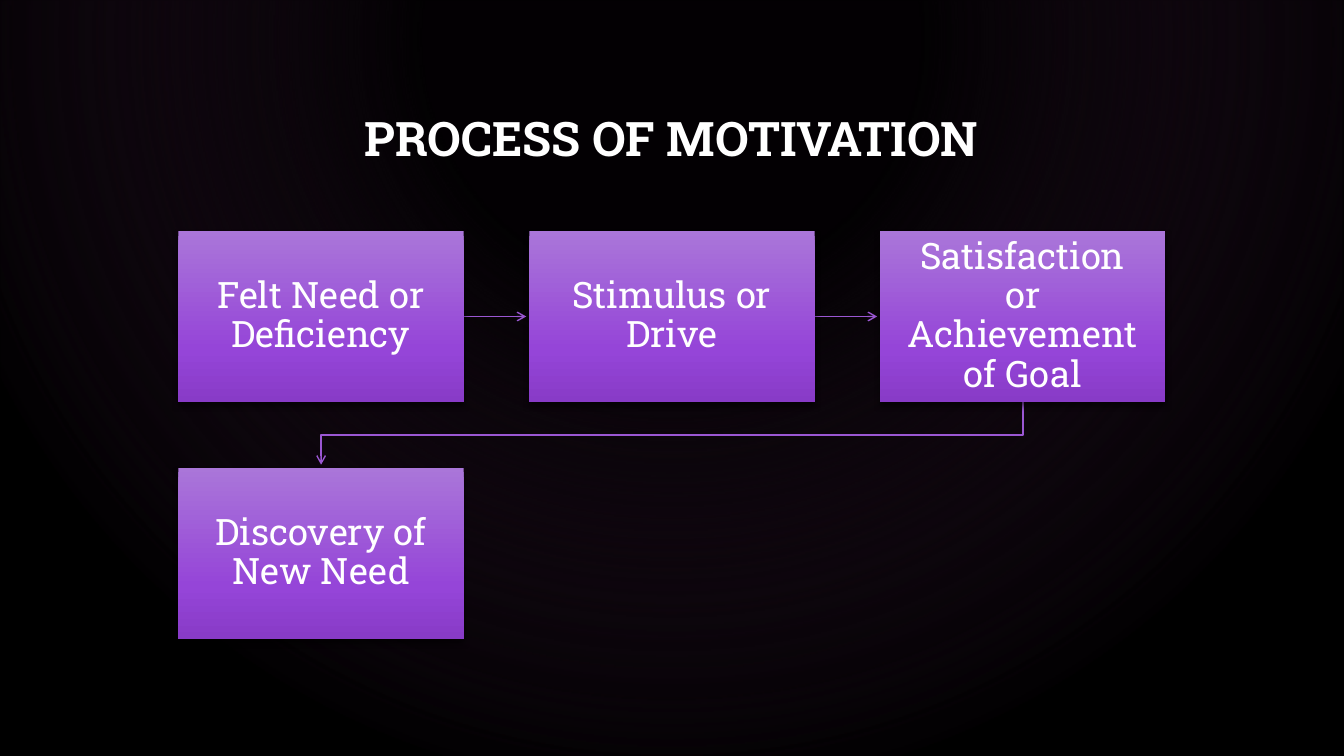
import pptx
import pptx.dml.color
import pptx.enum.shapes
import pptx.enum.text
import pptx.oxml
import pptx.oxml.ns
import pptx.util
from pptx.util import Inches

FONT = "Roboto Slab"
WHITE = "FFFFFF"
ARROW = "9B57D3"
STEP_STOPS = [(0, "AA76D9", 100), (69, "9545D8", 100), (100, "883BC7", 100)]
GLOW_STOPS = [(32, "4A2249", 3), (100, "000000", 70)]
LINEAR_DOWN = '<a:lin ang="5400000" scaled="0"/>'
CIRCLE_FROM_TOP = ('<a:path path="circle"><a:fillToRect l="50000" t="5000" '
                   'r="50000" b="95000"/></a:path>')

STEPS = ["Felt Need or Deficiency", "Stimulus or Drive",
         "Satisfaction or Achievement of Goal", "Discovery of New Need"]
COLUMNS = 3
STEP_WIDTH, STEP_HEIGHT = 2.83, 1.7
GAP = 0.65
ARROW_CLEARANCE = 0.03


def rgb(hex_colour):
    return pptx.dml.color.RGBColor.from_string(hex_colour)


def parse(tag, attributes="", content=""):
    """Build one DrawingML element."""
    namespace = pptx.oxml.ns.nsdecls("a")
    return pptx.oxml.parse_xml(f"<a:{tag} {namespace} {attributes}>{content}</a:{tag}>")


def fill_gradient(shape, stops, direction):
    """Fill with (position, colour, opacity) stops, all in percent."""
    stop_xml = "".join(
        f'<a:gs pos="{position * 1000}"><a:srgbClr val="{colour}">'
        f'<a:alpha val="{opacity * 1000}"/></a:srgbClr></a:gs>'
        for position, colour, opacity in stops)
    gradient = parse("gradFill", 'rotWithShape="1"', f"<a:gsLst>{stop_xml}</a:gsLst>{direction}")
    shape.fill.background()
    properties = shape._element.spPr
    properties.replace(properties.find(pptx.oxml.ns.qn("a:noFill")), gradient)


def format_text(paragraph, size, bold=False):
    paragraph.alignment = pptx.enum.text.PP_ALIGN.CENTER
    paragraph.line_spacing = 0.9
    paragraph.font.name = FONT
    paragraph.font.size = pptx.util.Pt(size)
    paragraph.font.bold = bold
    paragraph.font.color.rgb = rgb(WHITE)


def add_rectangle(slide, left, top, width, height, stops, direction):
    rectangle = slide.shapes.add_shape(
        pptx.enum.shapes.MSO_SHAPE.RECTANGLE,
        Inches(left), Inches(top), Inches(width), Inches(height))
    fill_gradient(rectangle, stops, direction)
    rectangle.line.fill.background()
    rectangle.shadow.inherit = False
    return rectangle


def add_background(slide, width, height):
    slide.background.fill.solid()
    slide.background.fill.fore_color.rgb = rgb("000000")
    glow = add_rectangle(slide, 0, 0, width, height, GLOW_STOPS, CIRCLE_FROM_TOP)
    tree = slide.shapes._spTree
    tree.remove(glow._element)
    tree.insert(2, glow._element)


def add_title(slide, left, top, width, height):
    title = slide.shapes.title
    title.left, title.top = Inches(left), Inches(top)
    title.width, title.height = Inches(width), Inches(height)
    title.text_frame.text = "PROCESS OF MOTIVATION"
    title.text_frame.vertical_anchor = pptx.enum.text.MSO_ANCHOR.MIDDLE
    format_text(title.text_frame.paragraphs[0], 34, bold=True)


def add_step(slide, left, top, label):
    step = add_rectangle(slide, left, top, STEP_WIDTH, STEP_HEIGHT, STEP_STOPS, LINEAR_DOWN)
    effects = step._element.spPr.find(pptx.oxml.ns.qn("a:effectLst"))
    effects.append(parse(
        "outerShdw", 'blurRad="50800" dist="38100" dir="5400000" rotWithShape="0"',
        '<a:srgbClr val="000000"><a:alpha val="54000"/></a:srgbClr>'))
    frame = step.text_frame
    frame.word_wrap = True
    frame.vertical_anchor = pptx.enum.text.MSO_ANCHOR.MIDDLE
    frame.margin_left = frame.margin_right = Inches(0.2)
    frame.margin_top = frame.margin_bottom = Inches(0.2)
    frame.text = label
    format_text(frame.paragraphs[0], 26)


def style_arrow(arrow):
    arrow.line.color.rgb = rgb(ARROW)
    arrow.line.width = pptx.util.Pt(1)
    arrow.line._get_or_add_ln().append(parse("tailEnd", 'type="arrow"'))


def add_straight_arrow(slide, start, end, y):
    arrow = slide.shapes.add_connector(
        pptx.enum.shapes.MSO_CONNECTOR.STRAIGHT,
        Inches(start), Inches(y), Inches(end), Inches(y))
    style_arrow(arrow)
    arrow._element.spPr.append(parse("effectLst"))


def add_return_arrow(slide, start, start_y, end, end_y):
    """Lead from the end of one row down and back to the start of the next."""
    middle = start_y + GAP / 2
    corners = [(start, middle), (end, middle), (end, end_y)]
    builder = slide.shapes.build_freeform(Inches(start), Inches(start_y))
    builder.add_line_segments([(Inches(x), Inches(y)) for x, y in corners], close=False)
    arrow = builder.convert_to_shape()
    arrow.fill.background()
    arrow.shadow.inherit = False
    style_arrow(arrow)


def add_process(slide, left, top):
    places = [(left + index % COLUMNS * (STEP_WIDTH + GAP),
               top + index // COLUMNS * (STEP_HEIGHT + GAP))
              for index in range(len(STEPS))]
    for (x, y), (next_x, next_y) in zip(places, places[1:]):
        if next_y == y:
            add_straight_arrow(slide, x + STEP_WIDTH, next_x - ARROW_CLEARANCE,
                               y + STEP_HEIGHT / 2)
        else:
            add_return_arrow(slide, x + STEP_WIDTH / 2, y + STEP_HEIGHT,
                             next_x + STEP_WIDTH / 2, next_y - ARROW_CLEARANCE)
    for (x, y), label in zip(places, STEPS):
        add_step(slide, x, y, label)


def main():
    width, height = 13.33, 7.5
    presentation = pptx.Presentation()
    presentation.slide_width = Inches(width)
    presentation.slide_height = Inches(height)
    slide = presentation.slides.add_slide(presentation.slide_layouts.get_by_name("Title Only"))
    add_background(slide, width, height)
    add_title(slide, 1, 0.67, 11.32, 1.45)
    add_process(slide, 1.77, 2.29)
    presentation.save("out.pptx")


if __name__ == "__main__":
    main()
